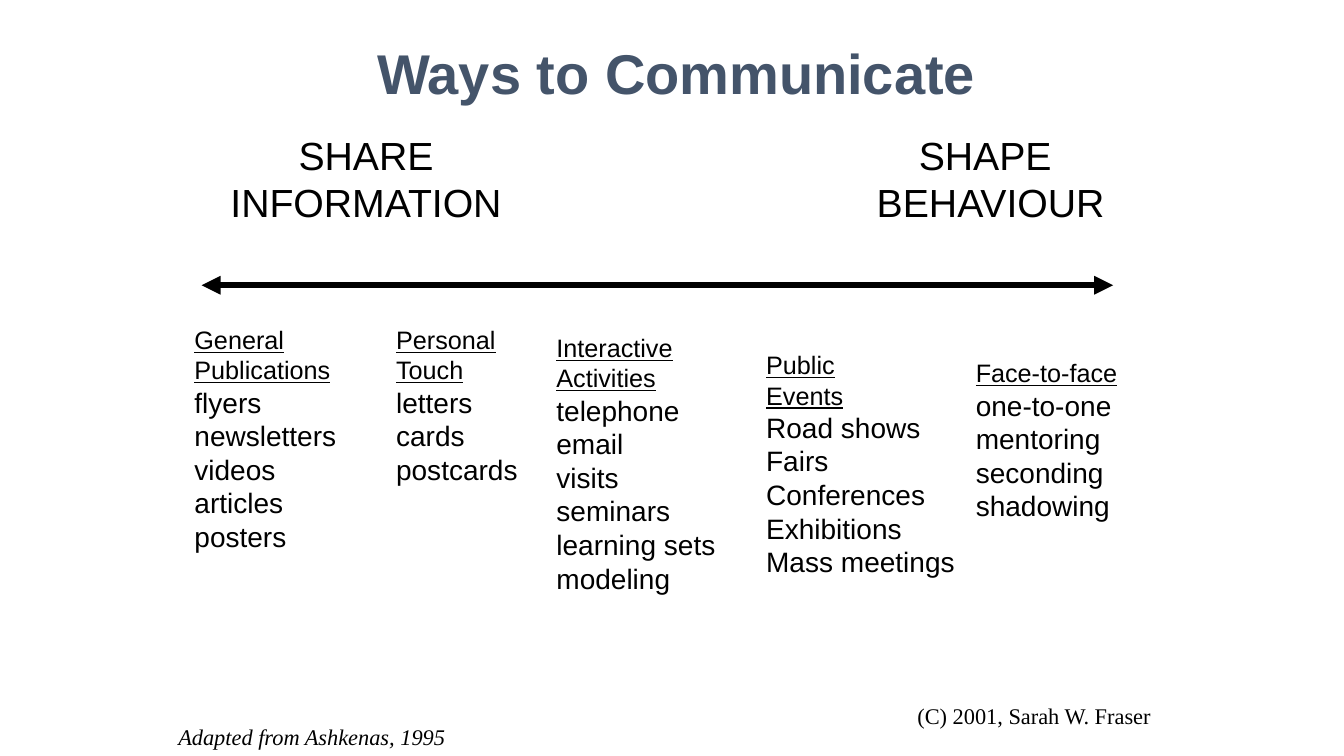
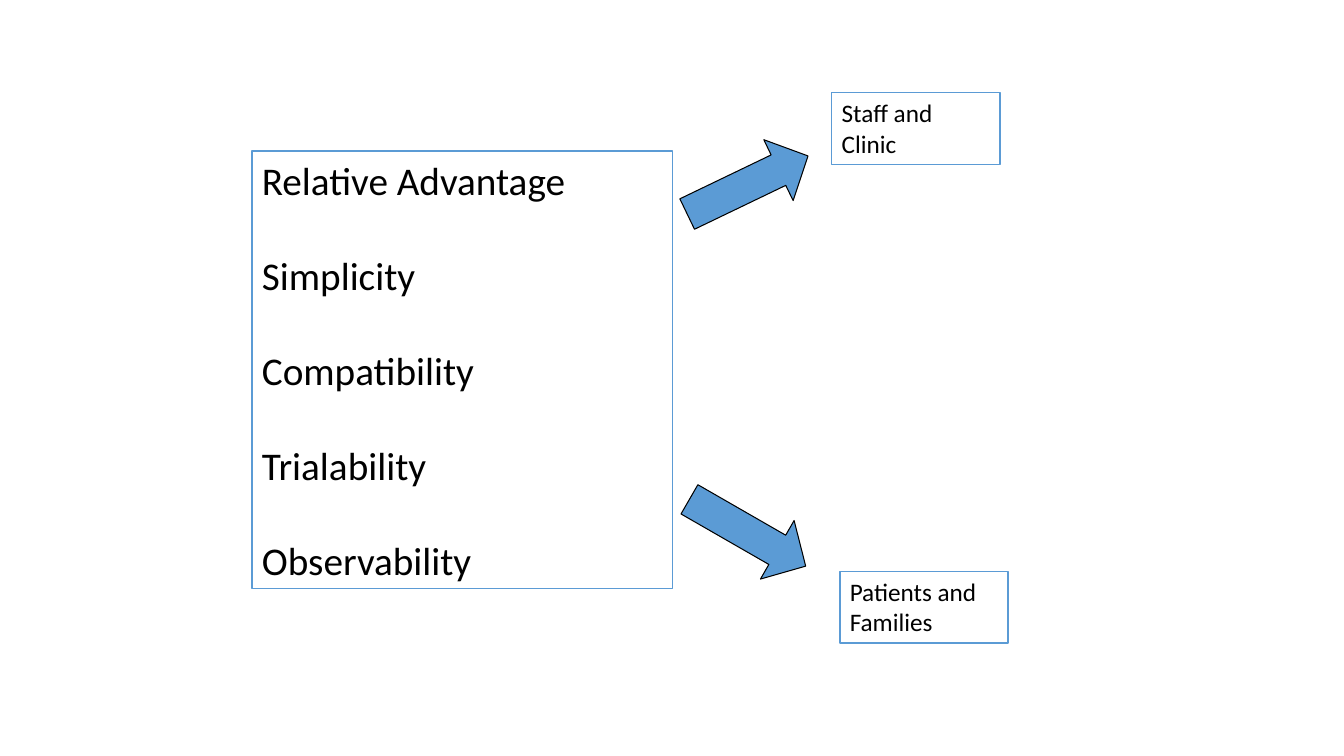
from dataclasses import dataclass

from lxml import etree
from pptx import Presentation
from pptx.dml.color import RGBColor
from pptx.enum.shapes import MSO_CONNECTOR, MSO_SHAPE
from pptx.enum.text import MSO_ANCHOR, MSO_AUTO_SIZE, PP_ALIGN
from pptx.oxml.ns import qn
from pptx.slide import Slide
from pptx.util import Inches, Pt

RECT, DOWN_ARROW = MSO_SHAPE.RECTANGLE, MSO_SHAPE.DOWN_ARROW
STRAIGHT = MSO_CONNECTOR.STRAIGHT
LEFT, CENTER = PP_ALIGN.LEFT, PP_ALIGN.CENTER
TOP = MSO_ANCHOR.TOP
FIT = MSO_AUTO_SIZE.SHAPE_TO_FIT_TEXT

BLACK = RGBColor(0x00, 0x00, 0x00)
WHITE = RGBColor(0xFF, 0xFF, 0xFF)
SLATE = RGBColor(0x44, 0x54, 0x6A)
BLUE = RGBColor(0x5B, 0x9B, 0xD5)

SANS, SERIF, BODY = "Arial", "Times New Roman", "Calibri"


@dataclass(frozen=True)
class Area:
    left: float
    top: float
    width: float
    height: float

    def emu(self) -> tuple[int, ...]:
        return tuple(Inches(v) for v in (self.left, self.top, self.width, self.height))


@dataclass(frozen=True)
class Style:
    font: str
    size: float
    color: RGBColor = BLACK
    bold: bool = False
    italic: bool = False
    underline: bool = False
    align: PP_ALIGN = LEFT
    gap: float = 0


@dataclass(frozen=True)
class Channel:
    area: Area
    heading: list[str]
    items: list[str]
    wrap: bool = False


@dataclass(frozen=True)
class Arrow:
    top: float
    rotation: float


TITLE = Style(SANS, 40, SLATE, bold=True, align=CENTER)
POLE = Style(SANS, 28, align=CENTER)
HEADING = Style(SANS, 18, underline=True)
ITEM = Style(SANS, 20)
CREDIT = Style(SERIF, 16)
SOURCE = Style(SERIF, 16, italic=True)
ATTRIBUTE = Style(BODY, 28, gap=34.2)
AUDIENCE = Style(BODY, 18)

POLES = [
    (Area(2.17, 1.25, 2.92, 1.03), ["SHARE", "INFORMATION"]),
    (Area(8.58, 1.25, 2.49, 1.03), ["SHAPE ", "BEHAVIOUR"]),
]
CHANNELS = [
    Channel(Area(1.83, 3.17, 1.62, 2.39), ["General", "Publications"],
            ["flyers", "newsletters", "videos", "articles", "posters"]),
    Channel(Area(3.83, 3.17, 1.42, 1.72), ["Personal", "Touch"],
            ["letters", "cards", "postcards"]),
    Channel(Area(5.42, 3.25, 1.79, 2.73), ["Interactive", "Activities"],
            ["telephone", "email", "visits", "seminars", "learning sets", "modeling"]),
    Channel(Area(7.5, 3.42, 2.09, 2.39), ["Public", "Events"],
            ["Road shows", "Fairs", "Conferences", "Exhibitions", "Mass meetings"]),
    Channel(Area(9.58, 3.5, 1.84, 1.75), ["Face-to-face"],
            ["one-to-one", "mentoring", "seconding", "shadowing"], wrap=True),
]
ATTRIBUTES = ["Relative Advantage", "Simplicity", "Compatibility",
              "Trialability", "Observability"]
AUDIENCES = [
    (Area(8.25, 0.92, 1.67, 0.71), "Staff and Clinic"),
    (Area(8.33, 5.67, 1.67, 0.71), "Patients and Families"),
]
ARROWS = [Arrow(1.17, 244.3), Arrow(4.62, 299.9)]


def add_text(s: Slide, area: Area, lines: list[tuple[str, Style]],
             wrap: bool = True, boxed: bool = False,
             border: RGBColor | None = None) -> None:
    """Add lines of styled text, on a white rectangle if boxed."""
    if boxed:
        sp = s.shapes.add_shape(RECT, *area.emu())
        sp.shadow.inherit = False
        sp.fill.solid()
        sp.fill.fore_color.rgb = WHITE
        if border is None:
            sp.line.fill.background()
        else:
            sp.line.color.rgb = border
            sp.line.width = Pt(1)
    else:
        sp = s.shapes.add_textbox(*area.emu())
    tf = sp.text_frame
    tf.word_wrap = wrap
    tf.auto_size = FIT
    tf.vertical_anchor = TOP
    tf.text = "\n".join(text for text, _ in lines)
    for i, (p, (_, style)) in enumerate(zip(tf.paragraphs, lines)):
        p.alignment = style.align
        if i and style.gap:
            p.space_before = Pt(style.gap)
        font = p.runs[0].font
        font.name, font.size = style.font, Pt(style.size)
        font.color.rgb = style.color
        font.bold, font.italic = style.bold, style.italic
        font.underline = style.underline


def styled(texts: list[str], style: Style) -> list[tuple[str, Style]]:
    return [(text, style) for text in texts]


def add_double_arrow(s: Slide, left: float, right: float, y: float) -> None:
    line = s.shapes.add_connector(STRAIGHT, Inches(left), Inches(y), Inches(right), Inches(y))
    line.line.color.rgb = BLACK
    line.line.width = Pt(4.5)
    ln = line.line._get_or_add_ln()
    for end in ("a:headEnd", "a:tailEnd"):
        etree.SubElement(ln, qn(end), type="triangle")
    etree.SubElement(ln.getparent(), qn("a:effectLst"))


def add_block_arrow(s: Slide, arrow: Arrow) -> None:
    sp = s.shapes.add_shape(DOWN_ARROW, *Area(7.08, arrow.top, 0.67, 1.33).emu())
    sp.adjustments[0], sp.adjustments[1] = 0.5, 0.485
    sp.rotation = arrow.rotation
    sp.shadow.inherit = False
    sp.fill.solid()
    sp.fill.fore_color.rgb = BLUE
    sp.line.color.rgb = BLACK
    sp.line.width = Pt(0.75)


def build_communication(s: Slide) -> None:
    # Title and the two ends of the scale
    add_text(s, Area(2.33, 0.33, 8.75, 0.77), [("Ways to Communicate", TITLE)])
    for area, words in POLES:
        add_text(s, area, styled(words, POLE), wrap=False, boxed=True)
    add_double_arrow(s, 2, 11.04, 2.83)

    # Channels along the scale
    for channel in CHANNELS:
        lines = styled(channel.heading, HEADING) + styled(channel.items, ITEM)
        add_text(s, channel.area, lines, wrap=channel.wrap)

    # Credits
    add_text(s, Area(1.67, 7.13, 2.87, 0.37),
             [("Adapted from Ashkenas, 1995", SOURCE)], wrap=False)
    add_text(s, Area(9, 6.92, 2.55, 0.37),
             [("(C) 2001, Sarah W. Fraser", CREDIT)], wrap=False)


def build_attributes(s: Slide) -> None:
    # Attributes, with arrows to each audience
    add_text(s, Area(2.5, 1.5, 4.17, 4.34), styled(ATTRIBUTES, ATTRIBUTE),
             boxed=True, border=BLUE)
    for arrow in ARROWS:
        add_block_arrow(s, arrow)
    for area, name in AUDIENCES:
        add_text(s, area, [(name, AUDIENCE)], boxed=True, border=BLUE)


def main() -> None:
    prs = Presentation()
    prs.slide_width, prs.slide_height = Inches(13.33), Inches(7.5)
    blank = prs.slide_layouts[6]
    for build in (build_communication, build_attributes):
        build(prs.slides.add_slide(blank))
    prs.save("out.pptx")


if __name__ == "__main__":
    main()
